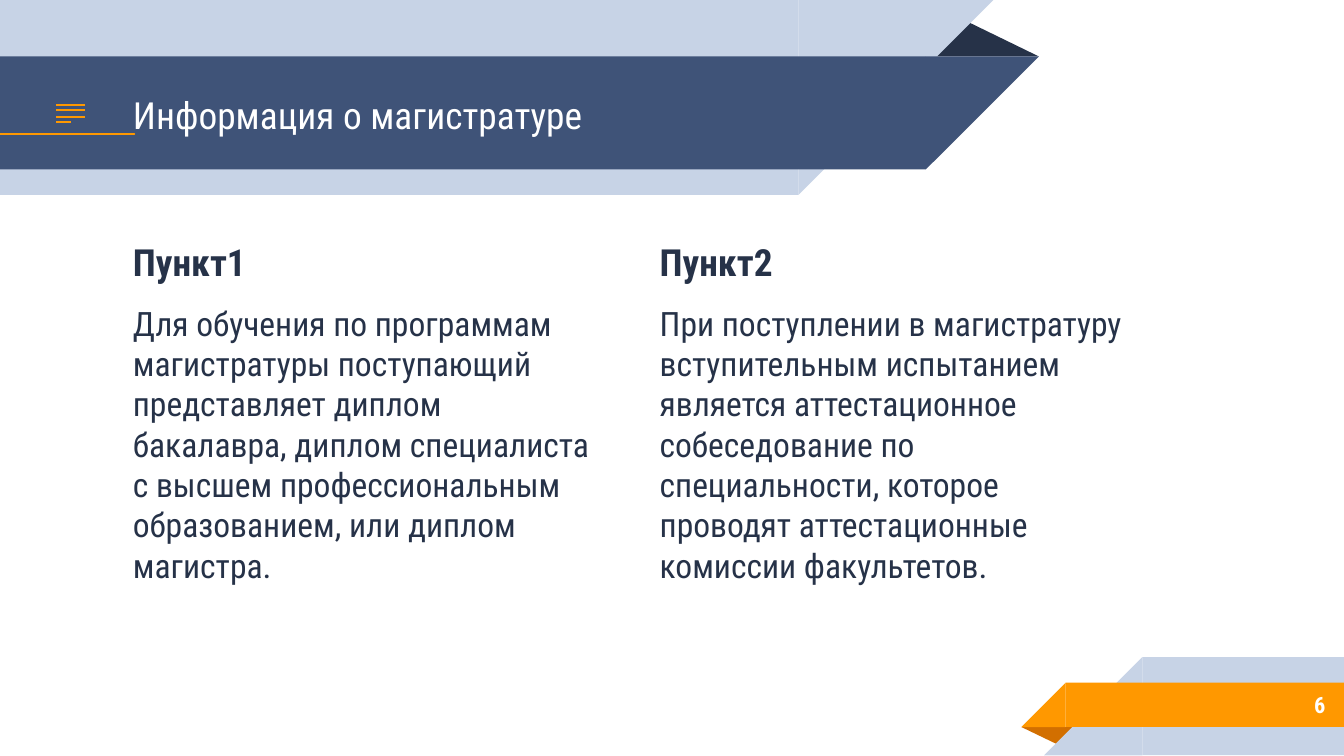
from pptx import Presentation
from pptx.dml.color import RGBColor
from pptx.enum.shapes import MSO_CONNECTOR, MSO_SHAPE
from pptx.enum.text import MSO_ANCHOR, PP_ALIGN
from pptx.util import Inches, Pt
from lxml import etree

RECTANGLE, CORNER, TRIANGLE = MSO_SHAPE.RECTANGLE, MSO_SHAPE.RIGHT_TRIANGLE, MSO_SHAPE.ISOSCELES_TRIANGLE
MIDDLE, TOP = MSO_ANCHOR.MIDDLE, MSO_ANCHOR.TOP
LEFT, RIGHT = PP_ALIGN.LEFT, PP_ALIGN.RIGHT

NAVY = RGBColor(0x26, 0x32, 0x48)
BLUE = RGBColor(0x3F, 0x53, 0x78)
PALE = RGBColor(0xC7, 0xD3, 0xE6)
ORANGE = RGBColor(0xFF, 0x98, 0x00)
RUST = RGBColor(0xD2, 0x6F, 0x00)
WHITE = RGBColor(0xFF, 0xFF, 0xFF)
FONT = "Roboto Condensed"
A = "http://schemas.openxmlformats.org/drawingml/2006/main"

TITLE = "Информация о магистратуре"
PAGE_NUMBER = "6"
COLUMNS = [
    ("Пункт1", "Для обучения по программам магистратуры поступающий представляет "
               "диплом бакалавра, диплом специалиста с высшем профессиональным "
               "образованием, или диплом магистра."),
    ("Пункт2", "При поступлении в магистратуру вступительным испытанием является "
               "аттестационное собеседование по специальности, которое проводят "
               "аттестационные комиссии факультетов."),
]
COLUMN_LEFT, COLUMN_STEP = 0.89, 3.92

# Top ribbons: top, straight length, height, colour
TOP_RIBBONS = [(0, 5.94, 1.45, PALE), (0.42, 6.89, 0.84, BLUE)]
# Bottom ribbons: left of the straight part, top, length, height, colour
BOTTOM_RIBBONS = [(8.5, 4.89, 1.5, 0.73, PALE), (7.93, 5.08, 2.07, 0.33, ORANGE)]

# Document icon outlines: points, closed
ICON_OUTLINES = [
    ([(0.66, 1.03), (0.66, 1.04), (0.65, 1.05), (0.64, 1.05), (0.36, 1.05),
      (0.35, 1.05), (0.34, 1.04), (0.34, 1.03), (0.34, 0.68), (0.35, 0.67),
      (0.36, 0.66)], False),
    ([(0.68, 0.71), (0.68, 1.01), (0.68, 1.02), (0.67, 1.03), (0.66, 1.03),
      (0.38, 1.03), (0.37, 1.02), (0.37, 1.01), (0.37, 0.66), (0.37, 0.65),
      (0.38, 0.64), (0.61, 0.64)], False),
    ([(0.61, 0.64), (0.68, 0.71), (0.63, 0.71), (0.62, 0.71), (0.61, 0.7)], True),
]
# Text lines on the icon: right end, height on the slide
ICON_LINES = [(0.63, 0.78), (0.63, 0.82), (0.63, 0.87), (0.53, 0.91)]
ICON_LINE_LEFT = 0.42
ICON_WEIGHT = Pt(0.96)


def add_block(page, kind, left, top, width, height, colour, rotation=0, flip=False):
    block = page.shapes.add_shape(kind, Inches(left), Inches(top), Inches(width), Inches(height))
    block.shadow.inherit = False
    block.fill.solid()
    block.fill.fore_color.rgb = colour
    block.line.fill.background()
    block.rotation = rotation
    if flip:
        block.element.spPr.get_or_add_xfrm().set("flipH", "1")
    return block


def add_fold(page, left, top, width, height, colour, rotation=0):
    fold = add_block(page, TRIANGLE, left, top, width, height, colour, rotation)
    fold.adjustments[0] = 0.324


def add_text(page, left, top, width, height, items, anchor=TOP, align=LEFT):
    """Each item is text, size, bold, colour, space before, space after."""
    box = page.shapes.add_textbox(Inches(left), Inches(top), Inches(width), Inches(height))
    frame = box.text_frame
    frame.word_wrap = True
    frame.vertical_anchor = anchor
    frame.margin_left = frame.margin_right = Inches(0.1)
    frame.margin_top = frame.margin_bottom = Inches(0.1)
    for index, (text, size, bold, colour, before, after) in enumerate(items):
        para = frame.add_paragraph() if index else frame.paragraphs[0]
        para.text = text
        para.alignment = align
        para.space_before, para.space_after = Pt(before), Pt(after)
        font = para.runs[0].font
        font.name, font.size, font.bold = FONT, Pt(size), bold
        font.color.rgb = colour


def add_icon(page):
    for points, closed in ICON_OUTLINES:
        start, *rest = points
        builder = page.shapes.build_freeform(*start, scale=Inches(1))
        builder.add_line_segments(rest, close=closed)
        outline = builder.convert_to_shape()
        outline.shadow.inherit = False
        outline.fill.background()
        outline.line.color.rgb = ORANGE
        outline.line.width = ICON_WEIGHT
    for right, height in ICON_LINES:
        line = page.shapes.add_connector(MSO_CONNECTOR.STRAIGHT, Inches(right), Inches(height),
                                         Inches(ICON_LINE_LEFT), Inches(height))
        line.line.color.rgb = ORANGE
        line.line.width = ICON_WEIGHT
        etree.SubElement(line.element.spPr, f"{{{A}}}effectLst")


def main():
    deck = Presentation()
    deck.slide_width, deck.slide_height = Inches(10), Inches(5.625)
    page = deck.slides.add_slide(deck.slide_layouts[6])

    add_fold(page, 6.88, 0.14, 0.85, 0.28, NAVY)
    for top, length, height, colour in TOP_RIBBONS:
        add_block(page, RECTANGLE, 0, top, length, height, colour)
        add_block(page, CORNER, length, top, height, height, colour, rotation=180, flip=True)

    add_fold(page, 7.6, 5.41, 0.43, 0.14, RUST, rotation=180)
    for left, top, length, height, colour in BOTTOM_RIBBONS:
        add_block(page, RECTANGLE, left, top, length, height, colour)
        add_block(page, CORNER, left - height, top, height, height, colour, flip=True)

    add_text(page, COLUMN_LEFT, 0.43, 5.75, 0.84,
             [(TITLE, 20, False, WHITE, 0, 0)], anchor=MIDDLE)
    for index, (heading, body) in enumerate(COLUMNS):
        add_text(page, COLUMN_LEFT + index * COLUMN_STEP, 1.68, 3.69, 2.98,
                 [(heading, 20, True, NAVY, 6, 0), (body, 18, False, NAVY, 10, 10)])
    add_text(page, 8.33, 5.07, 1.63, 0.35,
             [(PAGE_NUMBER, 12, True, WHITE, 0, 0)], anchor=MIDDLE, align=RIGHT)
    add_icon(page)

    deck.save("out.pptx")


if __name__ == "__main__":
    main()
